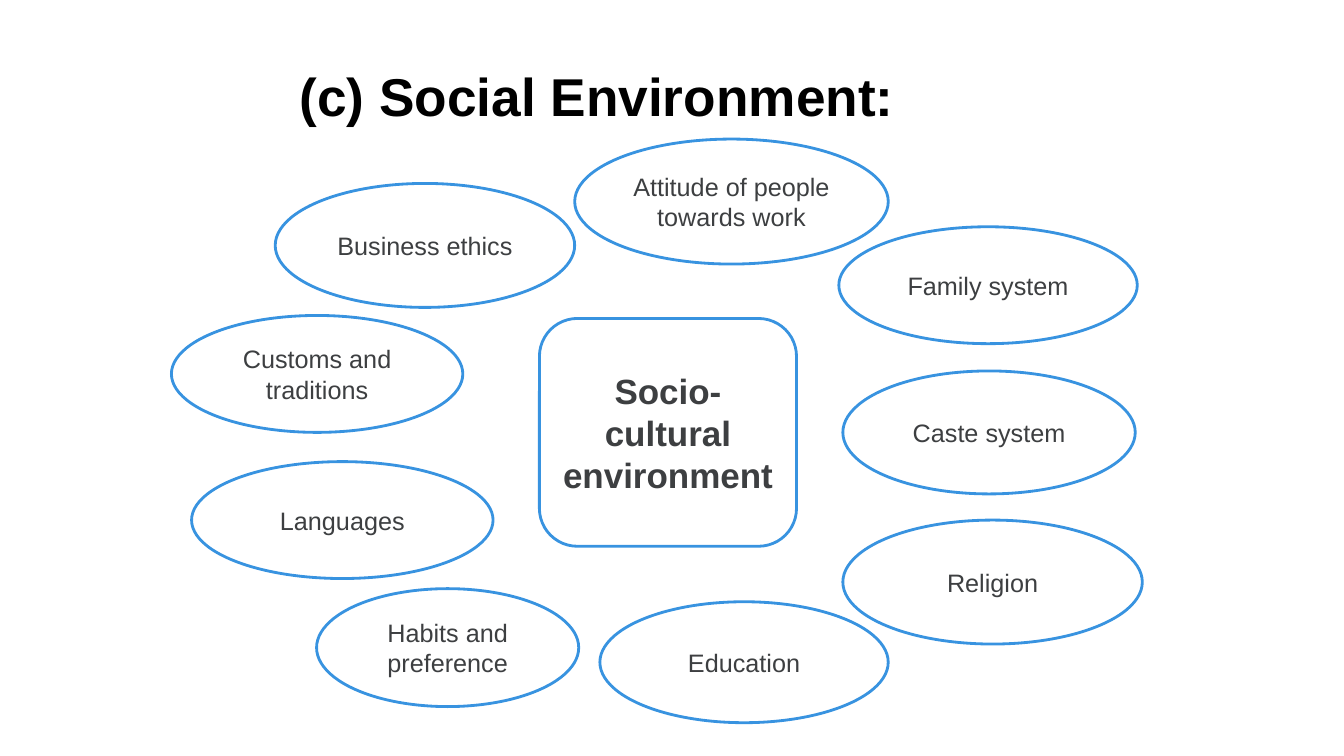
"""Build the slide on the factors of the social environment."""
from dataclasses import dataclass

import pptx
import pptx.dml.color
import pptx.enum.shapes
import pptx.enum.text
import pptx.shapes.autoshape
import pptx.slide
import pptx.text.text
import pptx.util

EMU_PER_PX = 9144
FONT = "Arial"
WHITE, BLUE, GREY, BLACK = "FFFFFF", "3893E0", "3D3F41", "000000"
ELLIPSE = pptx.enum.shapes.MSO_SHAPE.OVAL
ROUNDED = pptx.enum.shapes.MSO_SHAPE.ROUNDED_RECTANGLE


@dataclass(frozen=True)
class Bubble:
    label: str
    left: int
    top: int
    width: int
    height: int
    outline: pptx.enum.shapes.MSO_SHAPE = ELLIPSE
    size: int = 18
    bold: bool = False


BUBBLES = [
    Bubble("Socio-cultural environment", 535, 316, 255, 226, ROUNDED, 25, True),
    Bubble("Attitude of people towards work", 570, 138, 311, 124),
    Bubble("Family system", 832, 225, 296, 116),
    Bubble("Caste system", 836, 368, 290, 122),
    Bubble("Religion", 836, 516, 297, 123),
    Bubble("Education", 595, 597, 286, 120),
    Bubble("Habits and preference", 314, 584, 260, 117),
    Bubble("Languages", 190, 458, 299, 116),
    Bubble("Customs and traditions", 170, 313, 289, 116),
    Bubble("Business ethics", 273, 182, 297, 123),
]


def px(length: int) -> pptx.util.Emu:
    return pptx.util.Emu(length * EMU_PER_PX)


def colour(value: str) -> pptx.dml.color.RGBColor:
    return pptx.dml.color.RGBColor.from_string(value)


def write(frame: pptx.text.text.TextFrame, text: str, size: int, ink: str,
          bold: bool, align: pptx.enum.text.PP_ALIGN,
          anchor: pptx.enum.text.MSO_ANCHOR) -> None:
    frame.word_wrap = True
    frame.auto_size = pptx.enum.text.MSO_AUTO_SIZE.NONE
    frame.vertical_anchor = anchor
    frame.margin_left = frame.margin_right = px(10)
    frame.margin_top = frame.margin_bottom = px(5)
    paragraph = frame.paragraphs[0]
    paragraph.alignment = align
    run = paragraph.add_run()
    run.text = text
    run.font.name = FONT
    run.font.size = pptx.util.Pt(size)
    run.font.bold = bold
    run.font.color.rgb = colour(ink)


def add_title(slide: pptx.slide.Slide, text: str) -> None:
    title = slide.shapes.title
    title.left, title.top = px(287), px(58)
    title.width, title.height = px(694), px(70)
    write(title.text_frame, text, 38, BLACK, True,
          pptx.enum.text.PP_ALIGN.LEFT, pptx.enum.text.MSO_ANCHOR.TOP)


def add_bubble(slide: pptx.slide.Slide,
               bubble: Bubble) -> pptx.shapes.autoshape.Shape:
    shape = slide.shapes.add_shape(
        bubble.outline, px(bubble.left), px(bubble.top),
        px(bubble.width), px(bubble.height))
    shape.shadow.inherit = False
    shape.fill.solid()
    shape.fill.fore_color.rgb = colour(WHITE)
    shape.line.color.rgb = colour(BLUE)
    shape.line.width = pptx.util.Pt(2)
    write(shape.text_frame, bubble.label, bubble.size, GREY, bubble.bold,
          pptx.enum.text.PP_ALIGN.CENTER, pptx.enum.text.MSO_ANCHOR.MIDDLE)
    return shape


def main() -> None:
    deck = pptx.Presentation()
    deck.slide_width, deck.slide_height = px(1333), px(750)
    slide = deck.slides.add_slide(deck.slide_layouts.get_by_name("Title Only"))
    slide.background.fill.solid()
    slide.background.fill.fore_color.rgb = colour(WHITE)
    add_title(slide, "(c) Social Environment:")
    for bubble in BUBBLES:
        add_bubble(slide, bubble)
    deck.save("out.pptx")


if __name__ == "__main__":
    main()
